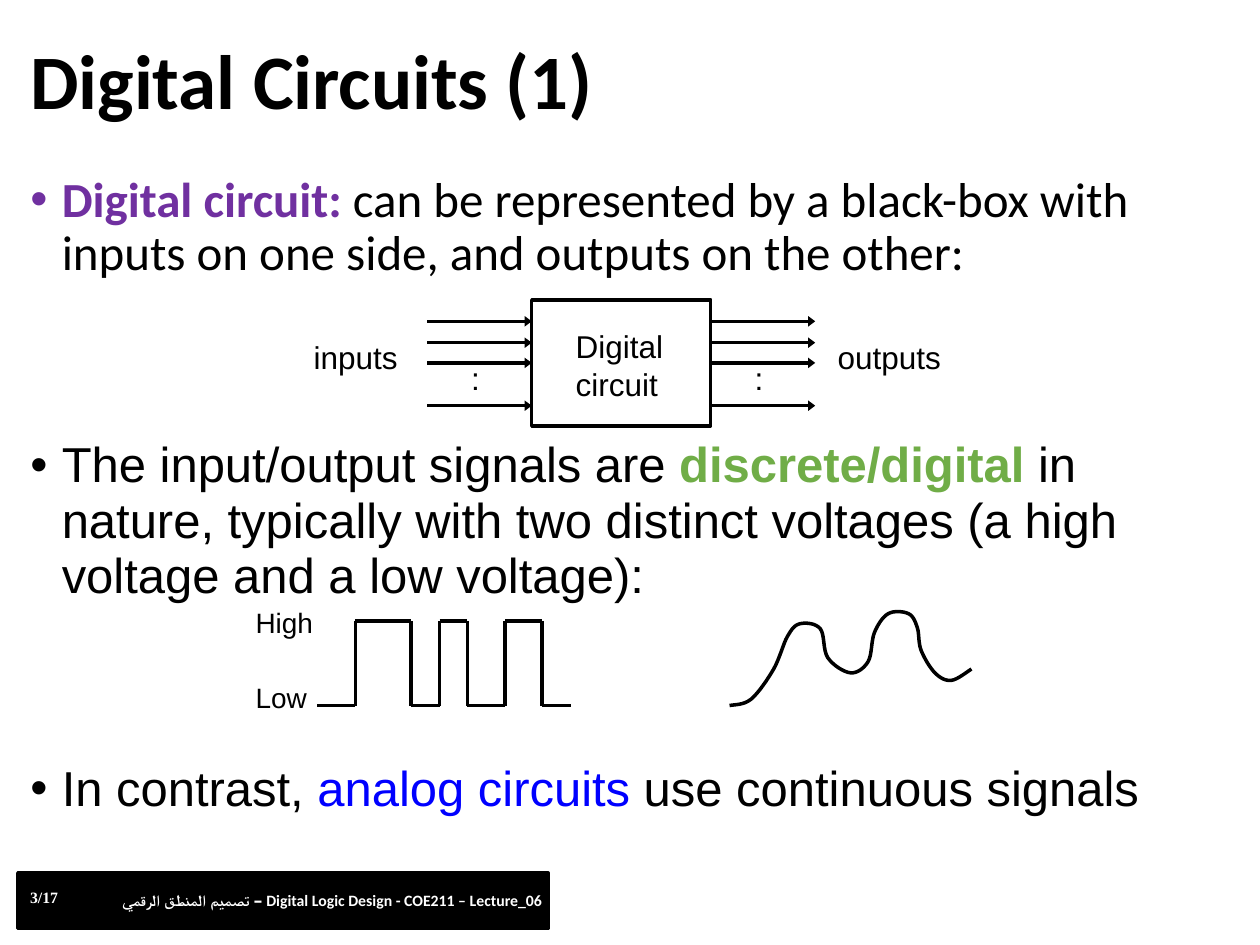
from itertools import pairwise

from lxml import etree
from pptx import Presentation
from pptx.dml.color import RGBColor
from pptx.enum.shapes import MSO_CONNECTOR, MSO_SHAPE
from pptx.enum.text import MSO_ANCHOR, MSO_AUTO_SIZE, PP_ALIGN
from pptx.oxml.ns import qn
from pptx.util import Pt

SCALE = 9144  # EMU per px, 100 px to the inch
RECT = MSO_SHAPE.RECTANGLE
STRAIGHT = MSO_CONNECTOR.STRAIGHT
MIDDLE, TOP = MSO_ANCHOR.MIDDLE, MSO_ANCHOR.TOP
LEFT = PP_ALIGN.LEFT
NO_FIT = MSO_AUTO_SIZE.NONE

BLACK = RGBColor(0x00, 0x00, 0x00)
WHITE = RGBColor(0xFF, 0xFF, 0xFF)
PURPLE = RGBColor(0x70, 0x30, 0xA0)
GREEN = RGBColor(0x70, 0xAD, 0x47)
BLUE = RGBColor(0x00, 0x00, 0xFF)

LABELS = [
    ("Digital circuit", 447, 255, 100, 70, 18),
    ("inputs", 239, 263, 92, 40, 18),
    ("outputs", 655, 263, 108, 40, 18),
    (":", 364, 280, 33, 40, 18),
    (":", 589, 280, 33, 40, 18),
    ("High", 193, 476, 67, 37, 16),
    ("Low", 193, 535, 67, 37, 16),
]
WIRES = [255, 272, 288, 322]
STEPS = [252, 282, 326, 349, 371, 401, 430, 453]
HIGH, LOW = 493, 560
WAVE = [
    (579, 560), (596, 555), (614, 531), (625, 505), (635, 495), (651, 499),
    (657, 522), (675, 534), (689, 525), (694, 502), (705, 487), (721, 487),
    (728, 498), (731, 516), (742, 534), (755, 540), (771, 531),
]
# Each item: line spacing, space before, runs of (text, format)
ITEMS = [
    (0.9, 10, [
        ("Digital circuit: ", dict(font="Calibri", color=PURPLE, bold=True)),
        ("can be represented by a black-box with inputs on one side, "
         "and outputs on the other:", dict(font="Calibri")),
    ]),
    (0.94, 90, [
        ("The input/output signals are ", {}),
        ("discrete/digital ", dict(color=GREEN, bold=True)),
        ("in nature, typically with two distinct voltages "
         "(a high voltage and a low voltage):", {}),
    ]),
    (0.94, 90, [
        ("In contrast, ", {}),
        ("analog circuits", dict(color=BLUE)),
        (" use continuous signals", {}),
    ]),
]


def px(*vals):
    return [round(v * SCALE) for v in vals]


def write(para, text, font="Arial", size=18, color=BLACK, bold=False):
    run = para.add_run()
    run.text = text
    run.font.name = font
    run.font.size = Pt(size)
    run.font.bold = bold
    run.font.color.rgb = color


def smooth(knots, parts=8):
    """Points of a Catmull-Rom curve through the knots."""
    ext = [knots[0], *knots, knots[-1]]
    for a, b, c, d in zip(ext, ext[1:], ext[2:], ext[3:]):
        for step in range(1, parts + 1):
            t = step / parts
            yield [
                (2 * q + (r - p) * t + (2 * p - 5 * q + 4 * r - s) * t ** 2
                 + (3 * q - p - 3 * r + s) * t ** 3) / 2
                for p, q, r, s in zip(a, b, c, d)
            ]


class Deck:
    """Holds the current slide and its line style."""

    def __init__(self, slide, width=2, color=BLACK):
        self.slide = slide
        self.shapes = slide.shapes
        self.width = Pt(width)
        self.color = color

    def stroke(self, shape):
        shape.line.color.rgb = self.color
        shape.line.width = self.width

    def holder(self, idx, x, y, w, h, anchor):
        shape = self.slide.placeholders[idx]
        shape.left, shape.top, shape.width, shape.height = px(x, y, w, h)
        frame = shape.text_frame
        frame.auto_size = NO_FIT
        frame.vertical_anchor = anchor
        return frame

    def title(self, text, *box):
        para = self.holder(0, *box, MIDDLE).paragraphs[0]
        para.alignment = LEFT
        para.line_spacing = 0.9
        write(para, text, "Calibri", 44, bold=True)

    def bullets(self, items, *box):
        frame = self.holder(1, *box, TOP)
        for num, (lead, before, runs) in enumerate(items):
            para = frame.add_paragraph() if num else frame.paragraphs[0]
            para.line_spacing = lead
            para.space_before = Pt(before)
            props = para._p.get_or_add_pPr()
            props.set("marL", str(25 * SCALE))
            props.set("indent", str(-25 * SCALE))
            for text, form in runs:
                write(para, text, size=28, **form)

    def label(self, text, x, y, w, h, size, **form):
        frame = self.shapes.add_textbox(*px(x, y, w, h)).text_frame
        frame.word_wrap = True
        para = frame.paragraphs[0]
        para.alignment = LEFT
        write(para, text, size=size, **form)

    def box(self, x, y, w, h, fill=None):
        shape = self.shapes.add_shape(RECT, *px(x, y, w, h))
        shape.shadow.inherit = False
        self.stroke(shape)
        if fill is None:
            shape.fill.background()
        else:
            shape.fill.solid()
            shape.fill.fore_color.rgb = fill

    def line(self, x1, y1, x2, y2, arrow=False):
        shape = self.shapes.add_connector(STRAIGHT, *px(x1, y1, x2, y2))
        self.stroke(shape)
        if arrow:
            etree.SubElement(shape.line._get_or_add_ln(), qn("a:tailEnd"),
                             type="triangle", w="med", len="sm")
        etree.SubElement(shape._element.spPr, qn("a:effectLst"))

    def curve(self, knots):
        path = self.shapes.build_freeform(*px(*knots[0]), scale=1.0)
        path.add_line_segments([px(*dot) for dot in smooth(knots)], close=False)
        shape = path.convert_to_shape()
        shape.shadow.inherit = False
        shape.fill.background()
        self.stroke(shape)


def main():
    prs = Presentation()
    prs.slide_width, prs.slide_height = px(1000, 750)
    deck = Deck(prs.slides.add_slide(prs.slide_layouts[1]))

    deck.box(14, 693, 421, 44, BLACK)
    deck.label("3/17", 14, 700, 51, 25, 9,
               font="Times New Roman", color=WHITE, bold=True)
    deck.label("تصميم المنطق الرقمي – Digital Logic Design - COE211 – Lecture_06",
               87, 702, 372, 25, 9, font="Calibri", color=WHITE, bold=True)

    deck.title("Digital Circuits (1)", 14, 25, 974, 85)
    deck.bullets(ITEMS, 14, 134, 974, 541)

    deck.box(422, 238, 142, 100)
    for start in (339, 564):
        for y in WIRES:
            deck.line(start, y, start + 83, y, arrow=True)

    level, other = LOW, HIGH
    for left, right in pairwise(STEPS):
        deck.line(left, level, right, level)
        if right != STEPS[-1]:
            deck.line(right, HIGH, right, LOW)
        level, other = other, level
    deck.curve(WAVE)

    for label in LABELS:
        deck.label(*label)
    prs.save("out.pptx")


if __name__ == "__main__":
    main()
